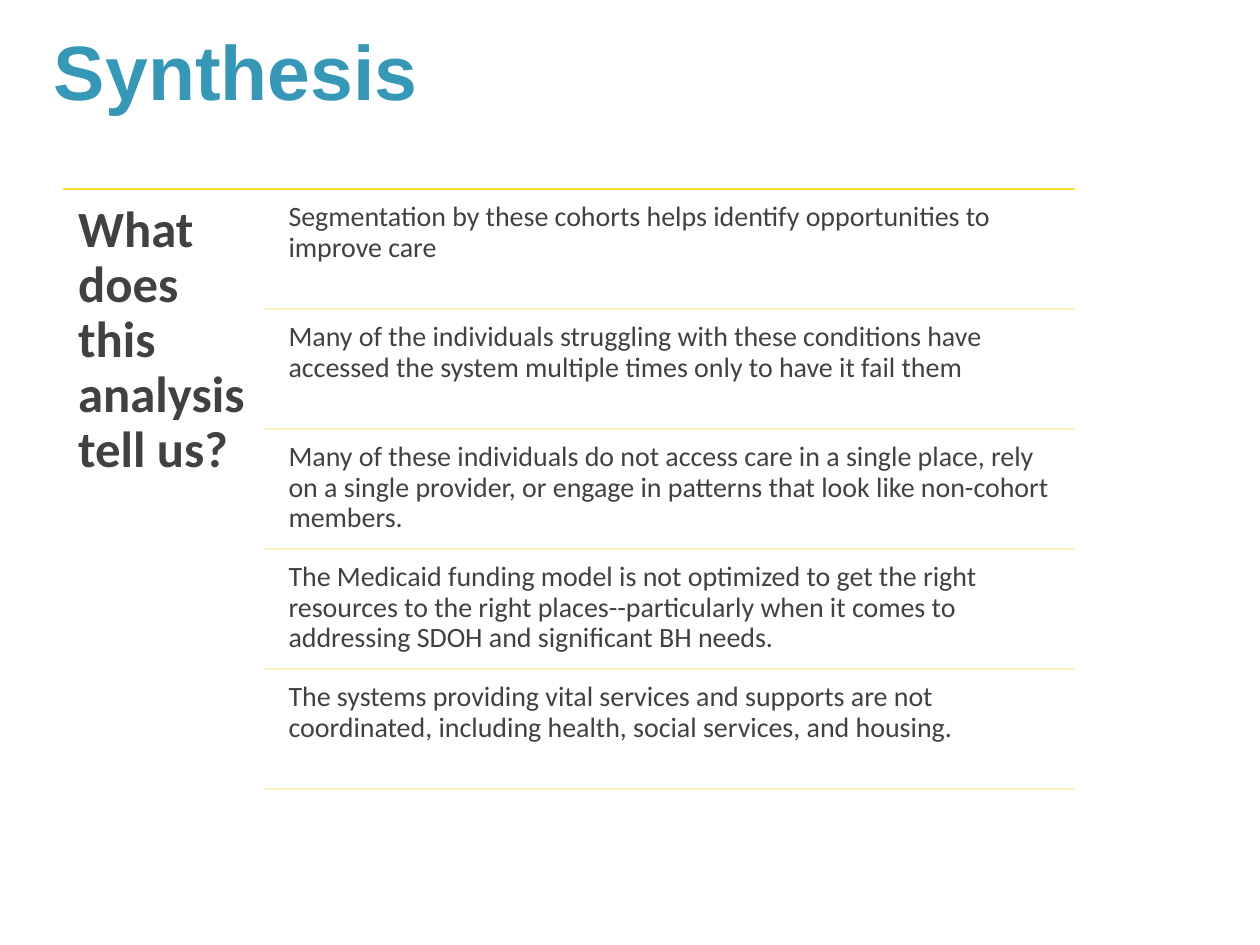
from lxml.etree import SubElement
from pptx import Presentation
from pptx.dml.color import RGBColor
from pptx.enum.shapes import MSO_CONNECTOR
from pptx.enum.text import MSO_ANCHOR
from pptx.oxml.ns import qn
from pptx.util import Inches, Pt

# Content
TITLE = "Synthesis"
QUESTION = "What does this analysis tell us?"
FINDINGS = [
    "Segmentation by these cohorts helps identify opportunities to improve care",
    "Many of the individuals struggling with these conditions have accessed "
    "the system multiple times only to have it fail them",
    "Many of these individuals do not access care in a single place, rely on a "
    "single provider, or engage in patterns that look like non-cohort members.",
    "The Medicaid funding model is not optimized to get the right resources to "
    "the right places--particularly when it comes to addressing SDOH and "
    "significant BH needs.",
    "The systems providing vital services and supports are not coordinated, "
    "including health, social services, and housing.",
]
COLORS = {"title": "3797B7", "text": "404140", "top": "FEDB2F", "rule": "FFEEBE"}

# Layout in inches
LEFT, RIGHT = 0.5, 8.53
RULE_LEFT, FINDING_LEFT = 2.1, 2.22
LIST_TOP, LIST_HEIGHT = 1.5, 4.76
ROW_HEIGHT = LIST_HEIGHT / len(FINDINGS)
ROW_GAP = 0.04


def add_text(slide, text, left, top, width, height, size, color,
             font="Calibri", bold=False, side=0.1, edge=0.05):
    box = slide.shapes.add_textbox(
        Inches(left), Inches(top), Inches(width), Inches(height))
    frame = box.text_frame
    frame.word_wrap = True
    frame.vertical_anchor = MSO_ANCHOR.TOP
    frame.margin_left = frame.margin_right = Inches(side)
    frame.margin_top = frame.margin_bottom = Inches(edge)
    para = frame.paragraphs[0]
    para.line_spacing = 0.9
    span = para.add_run()
    span.text = text
    span.font.name = font
    span.font.size = Pt(size)
    span.font.bold = bold
    span.font.color.rgb = RGBColor.from_string(COLORS[color])


def add_rule(slide, left, top, color):
    rule = slide.shapes.add_connector(
        MSO_CONNECTOR.STRAIGHT,
        Inches(left), Inches(top), Inches(RIGHT), Inches(top))
    rule.line.color.rgb = RGBColor.from_string(COLORS[color])
    rule.line.width = Pt(1)
    SubElement(rule._element.spPr, qn("a:effectLst"))


def main():
    deck = Presentation()
    deck.slide_width, deck.slide_height = Inches(10), Inches(7.5)
    page = deck.slides.add_slide(deck.slide_layouts[6])

    # Title
    add_text(page, TITLE, 0.33, 0.22, 9.11, 1.04, 44, "title",
             font="Arial", bold=True)

    # Question on the left
    add_rule(page, LEFT, LIST_TOP, "top")
    add_text(page, QUESTION, LEFT, LIST_TOP, 1.61, 4.81, 29, "text",
             bold=True, side=0.12, edge=0.12)

    # Findings, each closed by a rule
    for row, finding in enumerate(FINDINGS):
        top = LIST_TOP + row * ROW_HEIGHT
        add_text(page, finding, FINDING_LEFT, top + ROW_GAP,
                 RIGHT - FINDING_LEFT, ROW_HEIGHT - ROW_GAP, 16, "text",
                 side=0.07, edge=0.07)
        add_rule(page, RULE_LEFT, top + ROW_HEIGHT, "rule")

    deck.save("out.pptx")


if __name__ == "__main__":
    main()
